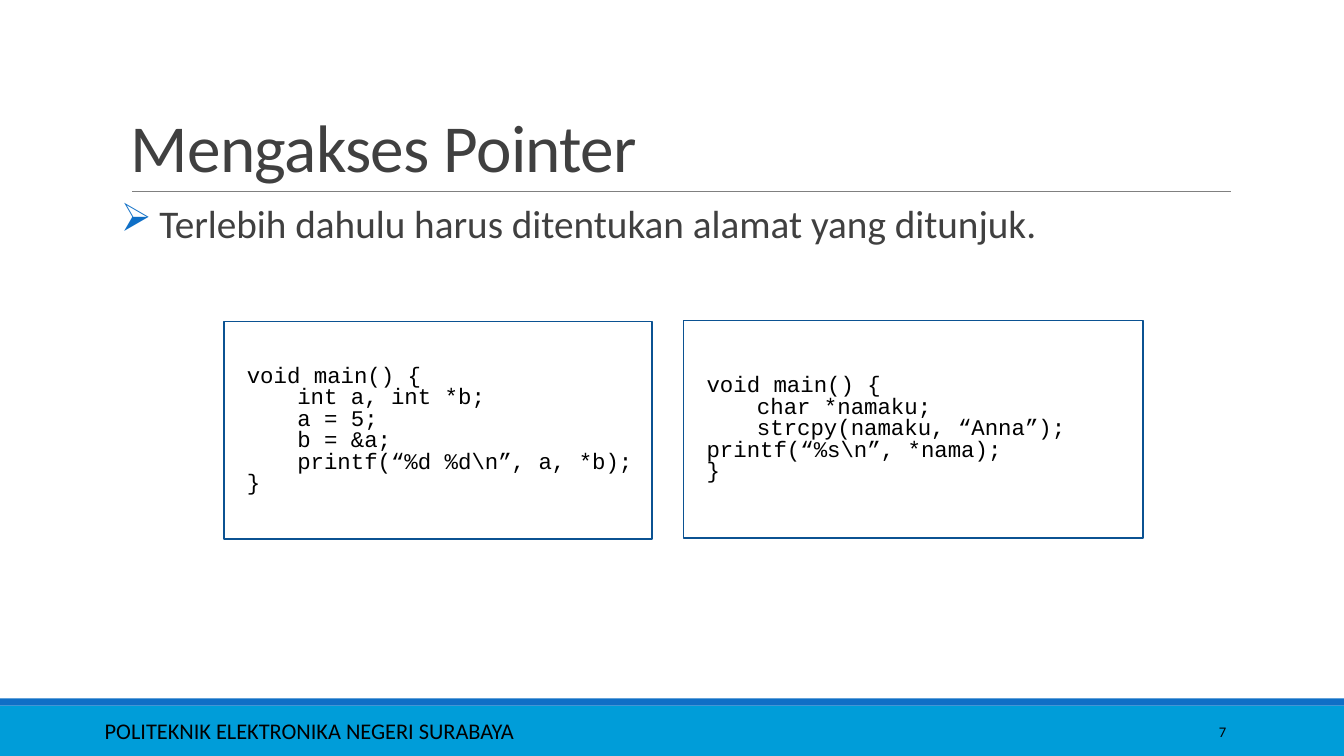
from lxml import etree
from pptx import Presentation
from pptx.dml.color import RGBColor
from pptx.enum import shapes, text
from pptx.oxml import ns
from pptx.util import Inches, Pt

BLACK = RGBColor(0x00, 0x00, 0x00)
DARK = RGBColor(0x40, 0x40, 0x40)
GRAY = RGBColor(0x80, 0x80, 0x80)
CYAN = RGBColor(0x00, 0x9D, 0xD9)
BLUE = RGBColor(0x0F, 0x6F, 0xC6)
NAVY = RGBColor(0x0B, 0x52, 0x92)

POINTER_CODE = [
    (0, "void main() {"),
    (1, "int a, int *b;"),
    (1, "a = 5;"),
    (1, "b = &a;"),
    (1, "printf(“%d %d\\n”, a, *b);"),
    (0, "}"),
]
STRING_CODE = [
    (0, "void main() {"),
    (1, "char *namaku;"),
    (1, "strcpy(namaku, “Anna”); printf(“%s\\n”, *nama);"),
    (0, "}"),
]


def format_runs(p, size, color, font="Calibri"):
    """Set font, size and colour on every run of a paragraph."""
    for r in p.runs:
        r.font.name = font
        r.font.size = Pt(size)
        r.font.color.rgb = color


def set_indent(p, left, first):
    """Set the left margin and first-line indent of a paragraph."""
    pPr = p._p.get_or_add_pPr()
    pPr.set("marL", str(Inches(left)))
    pPr.set("indent", str(Inches(first)))
    return pPr


def add_rect(s, box, fill=None, line=None):
    """Add a rectangle with an optional fill and outline."""
    sp = s.shapes.add_shape(shapes.MSO_SHAPE.RECTANGLE, *map(Inches, box))
    sp.shadow.inherit = False
    if fill is None:
        sp.fill.background()
    else:
        sp.fill.solid()
        sp.fill.fore_color.rgb = fill
    if line is None:
        sp.line.fill.background()
    else:
        sp.line.color.rgb = line
        sp.line.width = Pt(1.25)
    return sp


def add_text(s, box, words, size, color, anchor=text.MSO_ANCHOR.MIDDLE):
    """Add a wrapped one-paragraph text box and return its frame."""
    tf = s.shapes.add_textbox(*map(Inches, box)).text_frame
    tf.word_wrap = True
    tf.vertical_anchor = anchor
    tf.text = words
    format_runs(tf.paragraphs[0], size, color)
    return tf


def add_title(s, words):
    """Add the slide title with its underline."""
    tf = add_text(s, (1.2, 0.31, 11, 1.59), words, 48, DARK, text.MSO_ANCHOR.BOTTOM)
    p = tf.paragraphs[0]
    p.line_spacing = 0.85
    p.runs[0]._r.get_or_add_rPr().set("spc", "-50")
    rule = s.shapes.add_connector(
        shapes.MSO_CONNECTOR.STRAIGHT,
        Inches(1.31), Inches(1.9), Inches(12.21), Inches(1.9))
    rule.line.color.rgb = GRAY
    rule.line.width = Pt(0.5)
    etree.SubElement(rule._element.spPr, ns.qn("a:effectLst"))


def add_bullet(s, words):
    """Add the body statement with an arrow bullet."""
    tf = add_text(s, (1.2, 2.02, 11, 4.4), words, 28, DARK, text.MSO_ANCHOR.TOP)
    tf.margin_left = tf.margin_right = 0
    p = tf.paragraphs[0]
    p.line_spacing = 0.8
    p.space_after = Pt(2)
    pPr = set_indent(p, 0.38, -0.38)
    color = etree.SubElement(pPr, ns.qn("a:buClr"))
    etree.SubElement(color, ns.qn("a:srgbClr")).set("val", str(BLUE))
    etree.SubElement(pPr, ns.qn("a:buChar")).set("char", "➢")


def add_code(s, box, lines):
    """Add an outlined box of code lines, each with its indent level."""
    tf = add_rect(s, box, line=NAVY).text_frame
    tf.word_wrap = True
    tf.vertical_anchor = text.MSO_ANCHOR.MIDDLE
    tf.text = "\n".join(line for _, line in lines)
    for p, (level, _) in zip(tf.paragraphs, lines):
        p.alignment = text.PP_ALIGN.LEFT
        p.line_spacing = 0.8
        set_indent(p, 0.13, 0.5 * level)
        format_runs(p, 16, BLACK, "Courier New")


def add_footer(s, words, number):
    """Add the footer bands, institution name and page number."""
    add_rect(s, (0, 7, 13.33, 0.5), fill=CYAN)
    add_rect(s, (0, 6.93, 13.33, 0.07), fill=BLUE)
    add_text(s, (0.94, 7.05, 8.41, 0.4), words, 16, BLACK)
    tf = add_text(s, (10.83, 7.06, 1.43, 0.4), number, 10.5, BLACK)
    tf.paragraphs[0].alignment = text.PP_ALIGN.RIGHT


def main():
    """Build and save the slide."""
    prs = Presentation()
    prs.slide_width = Inches(13.33)
    prs.slide_height = Inches(7.5)
    s = prs.slides.add_slide(prs.slide_layouts[6])
    add_footer(s, "POLITEKNIK ELEKTRONIKA NEGERI SURABAYA", "7")
    add_title(s, "Mengakses Pointer")
    add_bullet(s, "Terlebih dahulu harus ditentukan alamat yang ditunjuk.")
    add_code(s, (2.22, 3.19, 4.25, 2.16), POINTER_CODE)
    add_code(s, (6.78, 3.18, 4.56, 2.16), STRING_CODE)
    prs.save("out.pptx")


if __name__ == "__main__":
    main()
